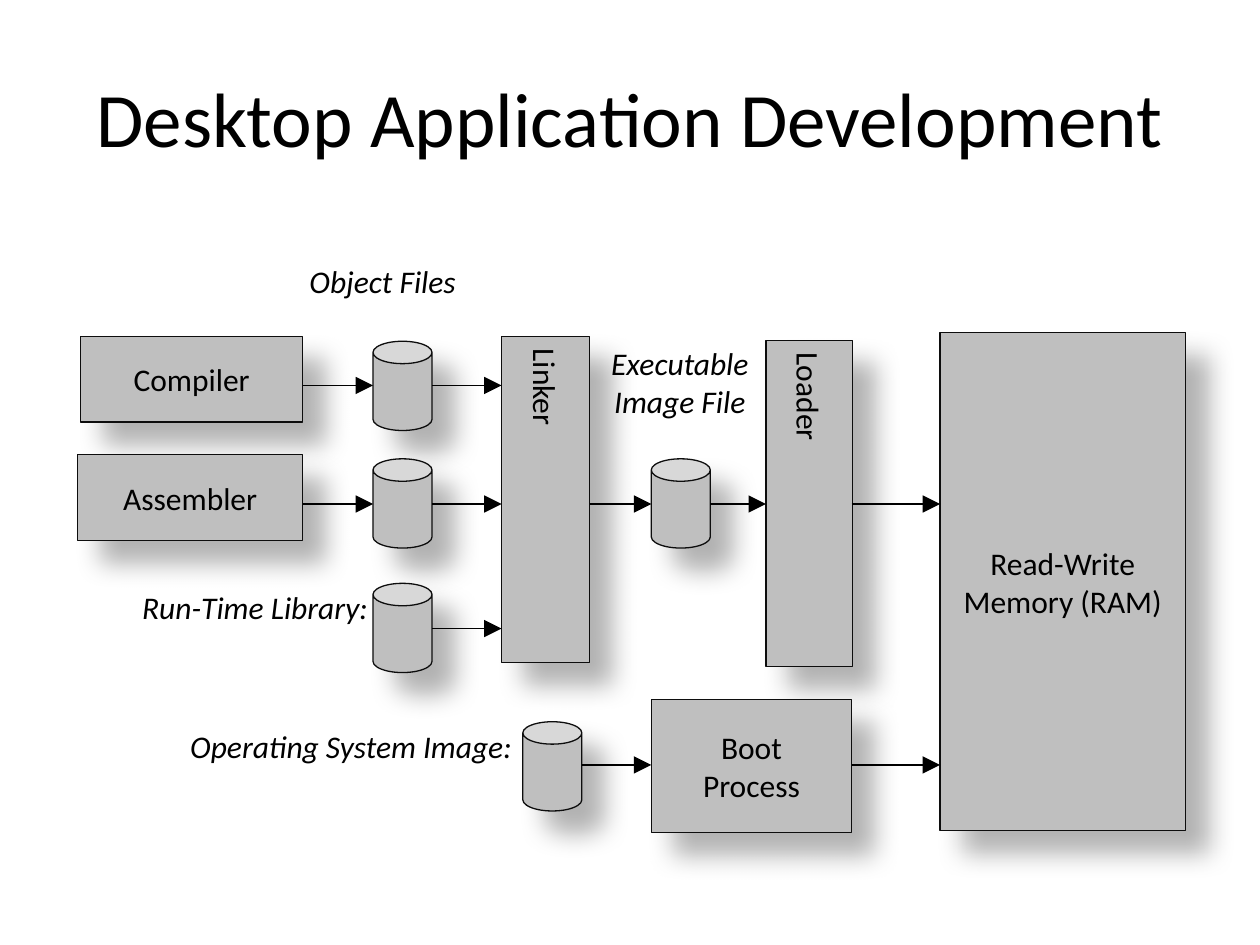
from dataclasses import dataclass

from lxml import etree
from pptx import Presentation
from pptx import util as u
from pptx.dml.color import RGBColor
from pptx.enum import shapes, text
from pptx.oxml.ns import qn


@dataclass(frozen=True)
class Theme:
    font: str = "Calibri"
    ink: RGBColor = RGBColor(0x00, 0x00, 0x00)
    fill: RGBColor = RGBColor(0xBF, 0xBF, 0xBF)
    outline: RGBColor = RGBColor(0x0D, 0x0D, 0x0D)
    title_size: u.Pt = u.Pt(44)
    body_size: u.Pt = u.Pt(18)
    line_width: u.Pt = u.Pt(0.75)


THEME = Theme()
CENTER, LEFT, RIGHT = (text.PP_ALIGN.CENTER, text.PP_ALIGN.LEFT, text.PP_ALIGN.RIGHT)

# Shared positions, in centimetres
CAN_WIDTH, CAN_HEIGHT = 1.19, 1.8
BOX_RIGHT = 6.1
OBJECT_X = 7.52
OBJECT_RIGHT = OBJECT_X + CAN_WIDTH
LINKER_X, LINKER_RIGHT = 10.11, 11.89
OS_IMAGE_X = 10.54
STAGE_X = 13.13
LOADER_X, STAGE_RIGHT = 15.44, 17.17
MEMORY_X = 18.95
COMPILER_Y, ASSEMBLER_Y, LIBRARY_Y, BOOT_Y = 7.77, 10.16, 12.67, 15.42


def write(shape, words, size=THEME.body_size, align=CENTER, italic=False,
          anchor=text.MSO_ANCHOR.MIDDLE):
    frame = shape.text_frame
    frame.word_wrap = True
    frame.vertical_anchor = anchor
    frame.text = words
    for paragraph in frame.paragraphs:
        paragraph.alignment = align
        font = paragraph.font
        font.name, font.size, font.italic = THEME.font, size, italic
        font.color.rgb = THEME.ink


def add_shadow(shape):
    shape.shadow.inherit = False
    effects = shape._element.spPr.find(qn("a:effectLst"))
    shadow = etree.SubElement(effects, qn("a:outerShdw"), blurRad=str(u.Pt(15)),
                              dist=str(u.Pt(18)), dir="2700000", rotWithShape="0")
    color = etree.SubElement(shadow, qn("a:srgbClr"), val=str(THEME.ink))
    etree.SubElement(color, qn("a:alpha"), val="30000")


def add_solid(slide, kind, left, top, width, height):
    shape = slide.shapes.add_shape(kind, u.Cm(left), u.Cm(top), u.Cm(width), u.Cm(height))
    shape.fill.solid()
    shape.fill.fore_color.rgb = THEME.fill
    shape.line.color.rgb = THEME.outline
    shape.line.width = THEME.line_width
    add_shadow(shape)
    return shape


def add_box(slide, words, left, top, width, height, vertical=False):
    shape = add_solid(slide, shapes.MSO_SHAPE.RECTANGLE, left, top, width, height)
    write(shape, words)
    if vertical:
        shape.text_frame._txBody.bodyPr.set("vert", "eaVert")


def add_can(slide, left, top):
    shape = add_solid(slide, shapes.MSO_SHAPE.CAN, left, top, CAN_WIDTH, CAN_HEIGHT)
    shape.adjustments[0] = 0.38


def add_arrow(slide, start, end, y):
    arrow = slide.shapes.add_connector(shapes.MSO_CONNECTOR.STRAIGHT,
                                       u.Cm(start), u.Cm(y), u.Cm(end), u.Cm(y))
    arrow.line.color.rgb = THEME.ink
    arrow.line.width = THEME.line_width
    etree.SubElement(arrow.line._get_or_add_ln(), qn("a:tailEnd"),
                     type="triangle", w="lg", len="lg")
    etree.SubElement(arrow._element.spPr, qn("a:effectLst"))


def add_label(slide, words, left, top, width, height, **style):
    box = slide.shapes.add_textbox(u.Cm(left), u.Cm(top), u.Cm(width), u.Cm(height))
    write(box, words, **style)


def main():
    presentation = Presentation()
    presentation.slide_width, presentation.slide_height = u.Cm(25.4), u.Cm(19.05)
    slide = presentation.slides.add_slide(presentation.slide_layouts[6])

    # Title
    add_label(slide, "Desktop Application Development", 1.27, 0.76, 22.86, 3.18,
              size=THEME.title_size)

    # Tools and memory
    for words, left, top, width, height, vertical in (
        ("Compiler", 1.63, 6.78, 4.47, 1.73, False),
        ("Assembler", 1.57, 9.17, 4.53, 1.73, False),
        ("Linker", LINKER_X, 6.78, 1.78, 6.58, True),
        ("Loader", LOADER_X, 6.86, 1.75, 6.58, True),
        ("Read-Write\nMemory (RAM)", MEMORY_X, 6.71, 4.95, 10.03, False),
        ("Boot\vProcess", STAGE_X, 14.1, 4.04, 2.69, False),
    ):
        add_box(slide, words, left, top, width, height, vertical)

    # Files
    for left, top in ((OBJECT_X, 6.88), (OBJECT_X, 9.25), (OBJECT_X, 11.76),
                      (OS_IMAGE_X, 14.55), (STAGE_X, 9.25)):
        add_can(slide, left, top)

    # Flow from left to right
    for y in (COMPILER_Y, ASSEMBLER_Y):
        add_arrow(slide, BOX_RIGHT, OBJECT_X, y)
    for y in (COMPILER_Y, ASSEMBLER_Y, LIBRARY_Y):
        add_arrow(slide, OBJECT_RIGHT, LINKER_X, y)
    add_arrow(slide, LINKER_RIGHT, STAGE_X, ASSEMBLER_Y)
    add_arrow(slide, STAGE_X + CAN_WIDTH, LOADER_X, ASSEMBLER_Y)
    add_arrow(slide, OS_IMAGE_X + CAN_WIDTH, STAGE_X, BOOT_Y)
    for y in (ASSEMBLER_Y, BOOT_Y):
        add_arrow(slide, STAGE_RIGHT, MEMORY_X, y)

    # File captions
    for words, left, top, width, height, align in (
        ("Object Files", 5.99, 5.16, 4.45, 1.47, LEFT),
        ("Executable Image File", 11.71, 6.81, 3.99, 2.62, CENTER),
        ("Run-Time Library:", 0, 11.73, 7.67, 1.7, RIGHT),
        ("Operating System Image:", 0.79, 14.53, 9.78, 1.88, RIGHT),
    ):
        add_label(slide, words, left, top, width, height, align=align, italic=True,
                  anchor=text.MSO_ANCHOR.TOP)

    presentation.save("out.pptx")


if __name__ == "__main__":
    main()
